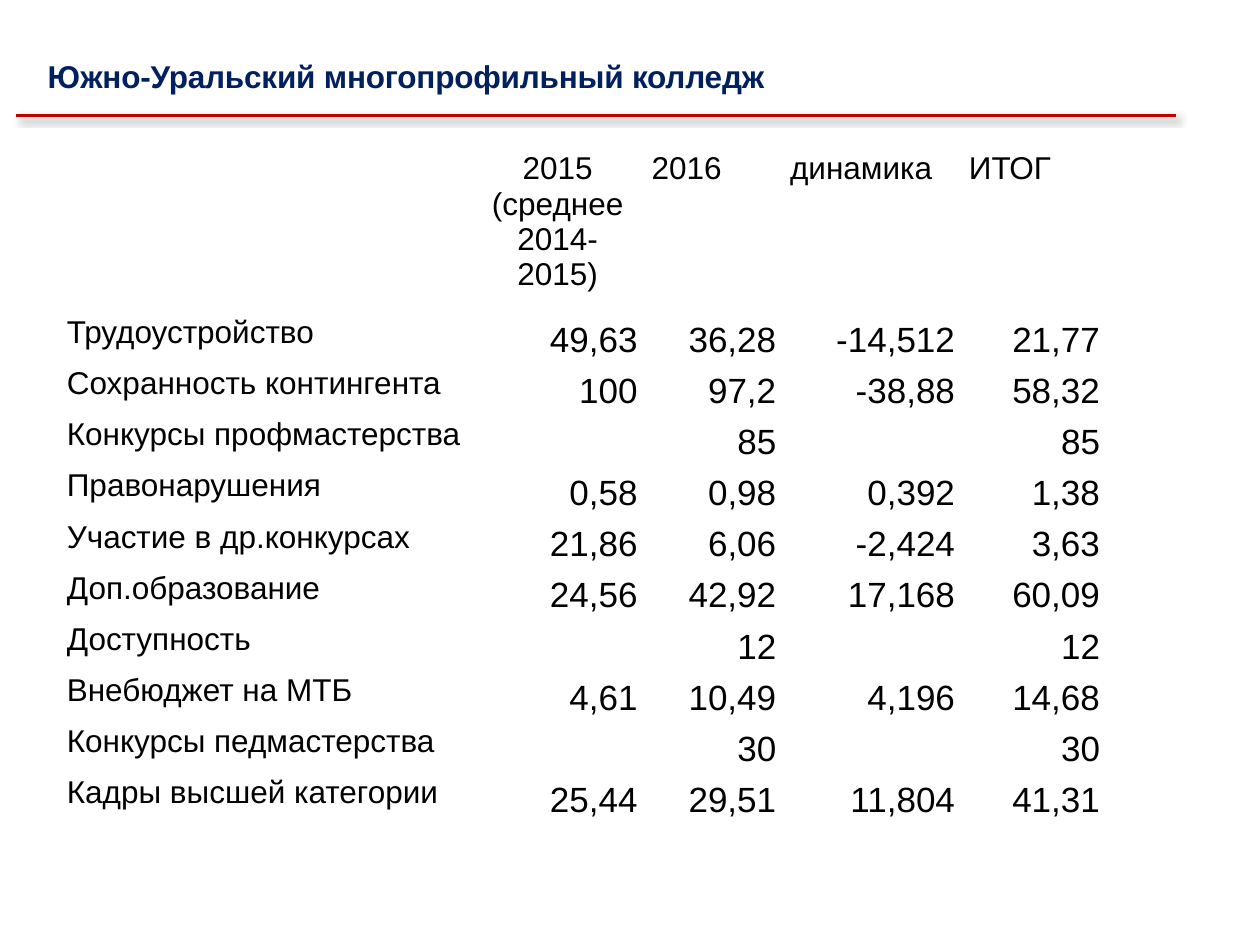
"""Build the college indicators slide with its results table."""
from lxml.etree import SubElement
from pptx import Presentation
from pptx.dml.color import RGBColor
from pptx.enum.shapes import MSO_CONNECTOR
from pptx.enum.text import MSO_ANCHOR, MSO_AUTO_SIZE, PP_ALIGN
from pptx.oxml.ns import qn
from pptx.util import Pt

NAVY = RGBColor(0x00, 0x20, 0x60)
RED = RGBColor(0xC0, 0x00, 0x00)
BLACK = RGBColor(0x00, 0x00, 0x00)

TITLE = "Южно-Уральский многопрофильный колледж"
HEADER = ["", "2015 (среднее 2014-2015)", "2016", "динамика", "ИТОГ"]
ROWS = [
    ["Трудоустройство", "49,63", "36,28", "-14,512", "21,77"],
    ["Сохранность контингента", "100", "97,2", "-38,88", "58,32"],
    ["Конкурсы профмастерства", "", "85", "", "85"],
    ["Правонарушения", "0,58", "0,98", "0,392", "1,38"],
    ["Участие в др.конкурсах", "21,86", "6,06", "-2,424", "3,63"],
    ["Доп.образование", "24,56", "42,92", "17,168", "60,09"],
    ["Доступность", "", "12", "", "12"],
    ["Внебюджет на МТБ", "4,61", "10,49", "4,196", "14,68"],
    ["Конкурсы педмастерства", "", "30", "", "30"],
    ["Кадры высшей категории", "25,44", "29,51", "11,804", "41,31"],
]
COL_WIDTHS = [241.2, 92.9, 79.2, 102.2, 82.8]
HEADER_HEIGHT, ROW_HEIGHT = 93.6, 29.2


def write(tf, text, size=18, color=BLACK, bold=False, align=PP_ALIGN.LEFT):
    p = tf.paragraphs[0]
    p.alignment = align
    r = p.add_run()
    r.text = text
    r.font.name, r.font.size, r.font.bold = "Arial", Pt(size), bold
    r.font.color.rgb = color
    return r


def add_rule(s):
    line = s.shapes.add_connector(MSO_CONNECTOR.STRAIGHT, Pt(9.4), Pt(66), Pt(671.8), Pt(66))
    line.line.color.rgb = RED
    line.line.width = Pt(1.5)
    effects = SubElement(line._element.spPr, qn("a:effectLst"))
    shadow = SubElement(effects, qn("a:outerShdw"), blurRad=str(Pt(4)), dist=str(Pt(3)),
                        dir="2700000", algn="tl", rotWithShape="0")
    color = SubElement(shadow, qn("a:srgbClr"), val=str(BLACK))
    SubElement(color, qn("a:alpha"), val="40000")


def add_title(s):
    box = s.shapes.add_textbox(Pt(20.2), Pt(28.8), Pt(427), Pt(28.8))
    tf = box.text_frame
    tf.word_wrap = False
    tf.auto_size = MSO_AUTO_SIZE.SHAPE_TO_FIT_TEXT
    r = write(tf, TITLE, color=NAVY, bold=True)
    r.font._element.set("spc", "-10")


def fill_cell(cell, text, row, col):
    cell.fill.background()
    if not text:
        return
    if row and col:
        cell.vertical_anchor = MSO_ANCHOR.BOTTOM
        cell.margin_left = cell.margin_right = cell.margin_top = Pt(0.75)
        cell.margin_bottom = Pt(0)
        write(cell.text_frame, text, size=20, align=PP_ALIGN.RIGHT)
    else:
        centred = row == 0 and col == 1
        write(cell.text_frame, text, align=PP_ALIGN.CENTER if centred else PP_ALIGN.LEFT)


def add_results(s):
    data = [HEADER] + ROWS
    heights = [HEADER_HEIGHT] + [ROW_HEIGHT] * len(ROWS)
    table = s.shapes.add_table(len(data), len(HEADER), Pt(31), Pt(82.8),
                               Pt(sum(COL_WIDTHS)), Pt(sum(heights))).table
    table.first_row = table.horz_banding = False
    for column, width in zip(table.columns, COL_WIDTHS):
        column.width = Pt(width)
    for i, (values, height) in enumerate(zip(data, heights)):
        table.rows[i].height = Pt(height)
        for j, text in enumerate(values):
            fill_cell(table.cell(i, j), text, i, j)


def main():
    prs = Presentation()
    prs.slide_width, prs.slide_height = Pt(720), Pt(540)
    s = prs.slides.add_slide(prs.slide_layouts[6])
    add_rule(s)
    add_title(s)
    add_results(s)
    prs.save("out.pptx")


if __name__ == "__main__":
    main()
